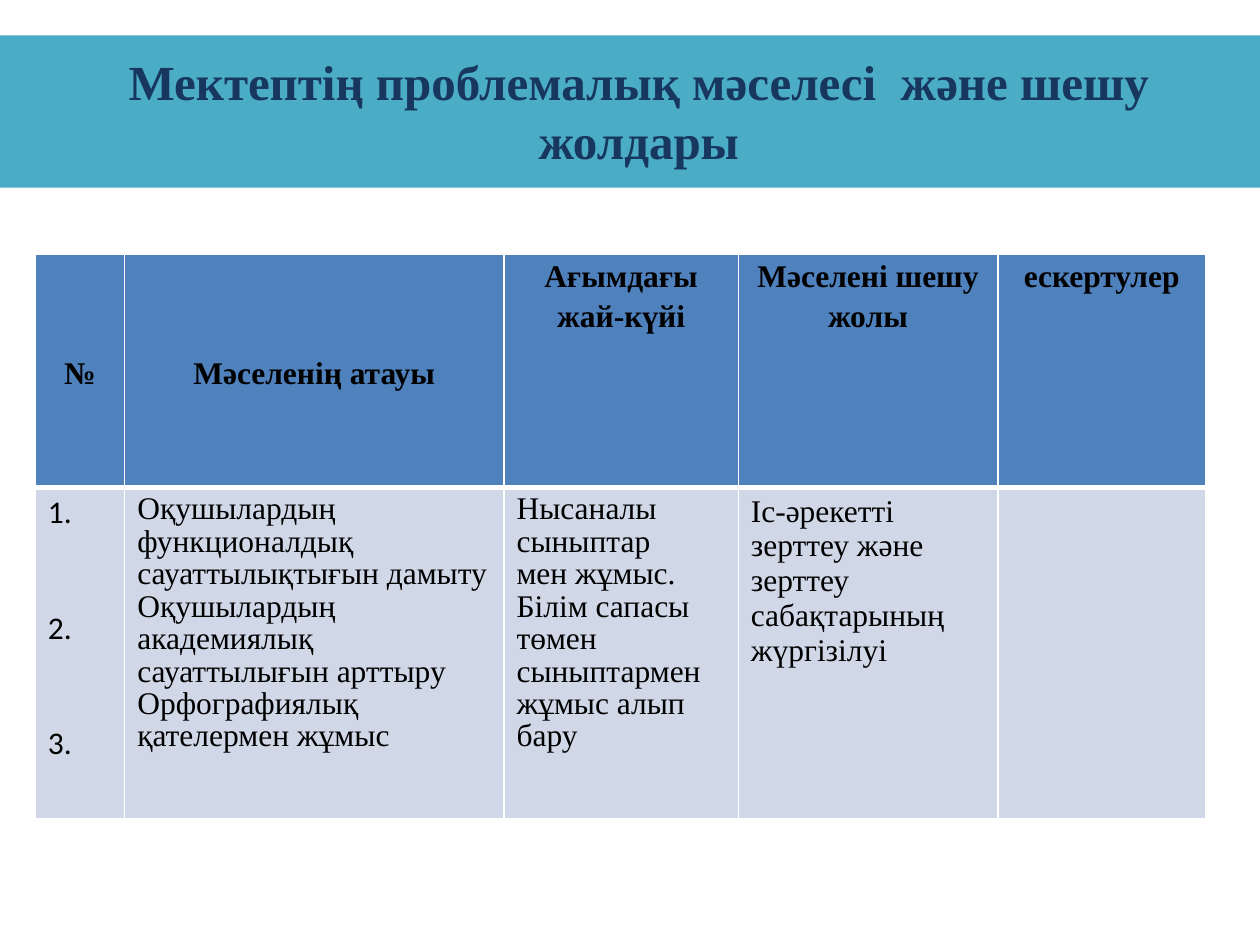
from lxml.etree import SubElement
from pptx import Presentation
from pptx.dml.color import RGBColor
from pptx.enum.shapes import MSO_SHAPE
from pptx.enum.text import MSO_ANCHOR as Anchor, MSO_AUTO_SIZE as AutoSize, PP_ALIGN as Align
from pptx.oxml.ns import qn
from pptx.util import Inches, Pt

TEAL = RGBColor(0x4B, 0xAC, 0xC6)
NAVY = RGBColor(0x17, 0x37, 0x5E)
BLUE = RGBColor(0x4F, 0x81, 0xBD)
PALE = RGBColor(0xD0, 0xD8, 0xE8)
BLACK = RGBColor(0, 0, 0)
WHITE = RGBColor(0xFF, 0xFF, 0xFF)
SERIF, SANS = "Times New Roman", "Calibri"


def write(frame, lines, font, paragraph):
    """Fill a text frame with one formatted paragraph per line."""
    frame.text = "\n".join(lines)
    for line in frame.paragraphs:
        for name, value in paragraph.items():
            setattr(line, name, value)
        for run in line.runs:
            for name, value in font.items():
                setattr(run.font, name, value)
            run.font.color.rgb = NAVY if font["size"] == Pt(28) else BLACK


def add_borders(cell, bottom):
    """White cell borders, 1 pt except for the bottom one."""
    properties = cell._tc.get_or_add_tcPr()
    for side, width in zip("LRTB", (1, 1, 1, bottom)):
        line = SubElement(properties, qn(f"a:ln{side}"), w=str(Pt(width)))
        SubElement(SubElement(line, qn("a:solidFill")), qn("a:srgbClr"), val=str(WHITE))


prs = Presentation()
prs.slide_width, prs.slide_height = Inches(10), Inches(7.5)
slide = prs.slides.add_slide(prs.slide_layouts[5])

# Title band, placed behind the title
band = slide.shapes.add_shape(
    MSO_SHAPE.RECTANGLE, Inches(-0.04), Inches(0.28), Inches(10.04), Inches(1.21))
band.shadow.inherit = False
band.fill.solid()
band.fill.fore_color.rgb = TEAL
band.line.fill.background()
slide.shapes._spTree.insert(2, band._element)

# Title
title = slide.shapes.title
title.left, title.top, title.width, title.height = map(Inches, (0.4, 0.36, 9.34, 1.04))
title.text_frame.auto_size = AutoSize.NONE
title.text_frame.vertical_anchor = Anchor.TOP
write(title.text_frame, ["Мектептің проблемалық мәселесі  және шешу жолдары"],
      {"name": SERIF, "size": Pt(28), "bold": True}, {"alignment": Align.CENTER})

# Problem table: width, heading, heading anchor, body lines, body font, body spacing
columns = [
    (0.71, "№", Anchor.MIDDLE, ["1.", "2.", "3."], SANS, {}),
    (3.01, "Мәселенің атауы", Anchor.MIDDLE,
     ["Оқушылардың функционалдық сауаттылықтығын дамыту",
      "Оқушылардың академиялық сауаттылығын арттыру",
      "Орфографиялық қателермен жұмыс"], SERIF, {"line_spacing": 0.93}),
    (1.86, "Ағымдағы жай-күйі", Anchor.TOP,
     ["Нысаналы сыныптар",
      "мен жұмыс. Білім сапасы төмен сыныптармен жұмыс алып бару"],
     SERIF, {"line_spacing": 0.93}),
    (2.06, "Мәселені шешу жолы", Anchor.TOP,
     ["Іс-әрекетті зерттеу және зерттеу сабақтарының жүргізілуі"], SERIF, {}),
    (1.65, "ескертулер", Anchor.TOP, [], SERIF, {}),
]
row_heights = (1.85, 2.63)
table = slide.shapes.add_table(
    len(row_heights), len(columns), Inches(0.28), Inches(2.02),
    Inches(9.29), Inches(sum(row_heights))).table
for row, height in zip(table.rows, row_heights):
    row.height = Inches(height)

for index, (width, heading, anchor, lines, face, spacing) in enumerate(columns):
    table.columns[index].width = Inches(width)
    head, body = table.cell(0, index), table.cell(1, index)
    for cell, fill, bottom in ((head, BLUE, 3), (body, PALE, 1)):
        add_borders(cell, bottom)
        cell.fill.solid()
        cell.fill.fore_color.rgb = fill
    head_format = {"margin_left": Inches(0.07), "margin_right": Inches(0.07),
                   "margin_top": 0, "margin_bottom": 0, "vertical_anchor": anchor}
    for name, value in head_format.items():
        setattr(head, name, value)
    write(head.text_frame, [heading], {"name": SERIF, "size": Pt(18), "bold": True},
          {"alignment": Align.CENTER, "line_spacing": 1.15})
    if lines:
        write(body.text_frame, lines, {"name": face, "size": Pt(18), "bold": False}, spacing)

# Two lines of space between the numbers
for number in table.cell(1, 0).text_frame.paragraphs[1:]:
    number.space_before = Pt(44)

prs.save("out.pptx")
